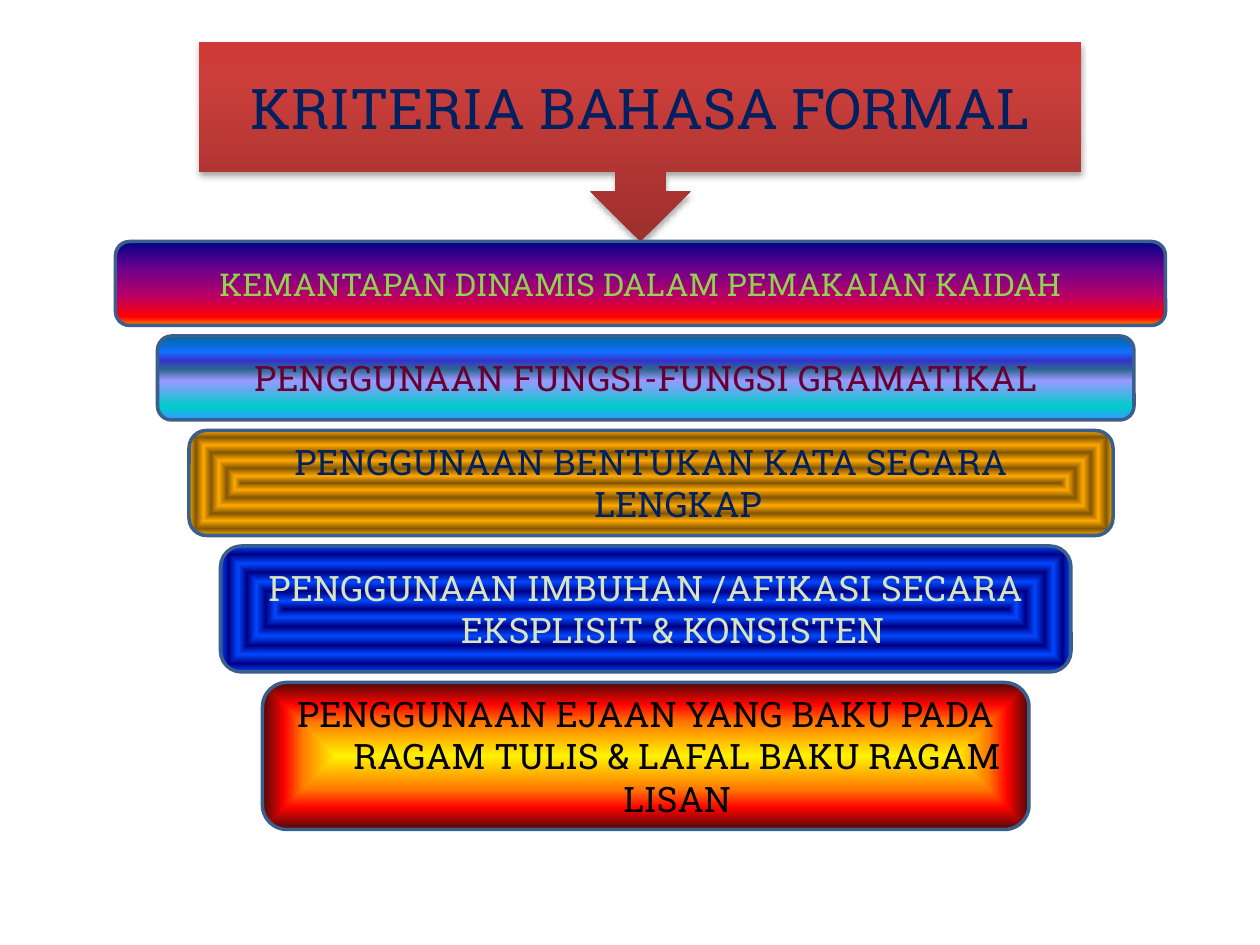
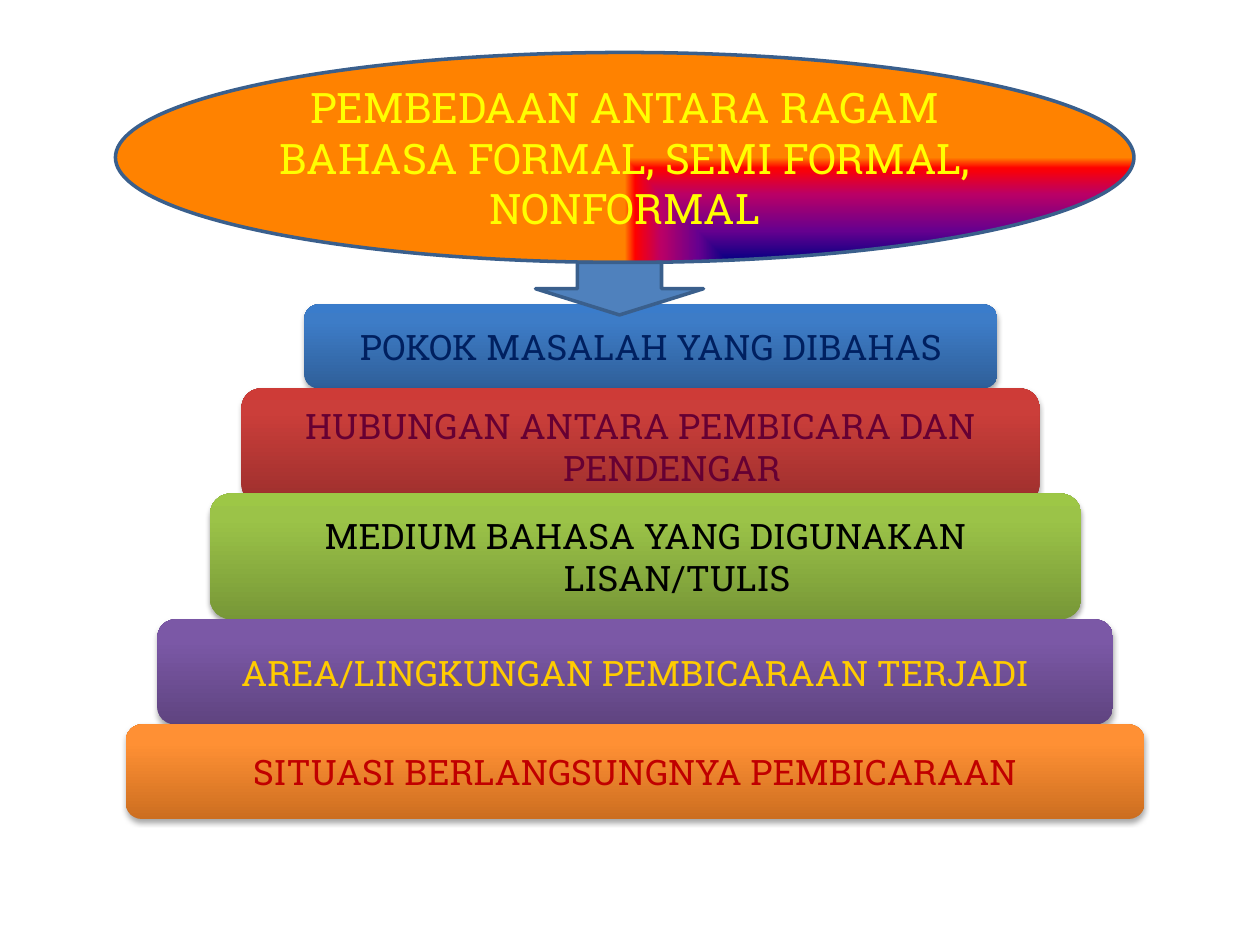
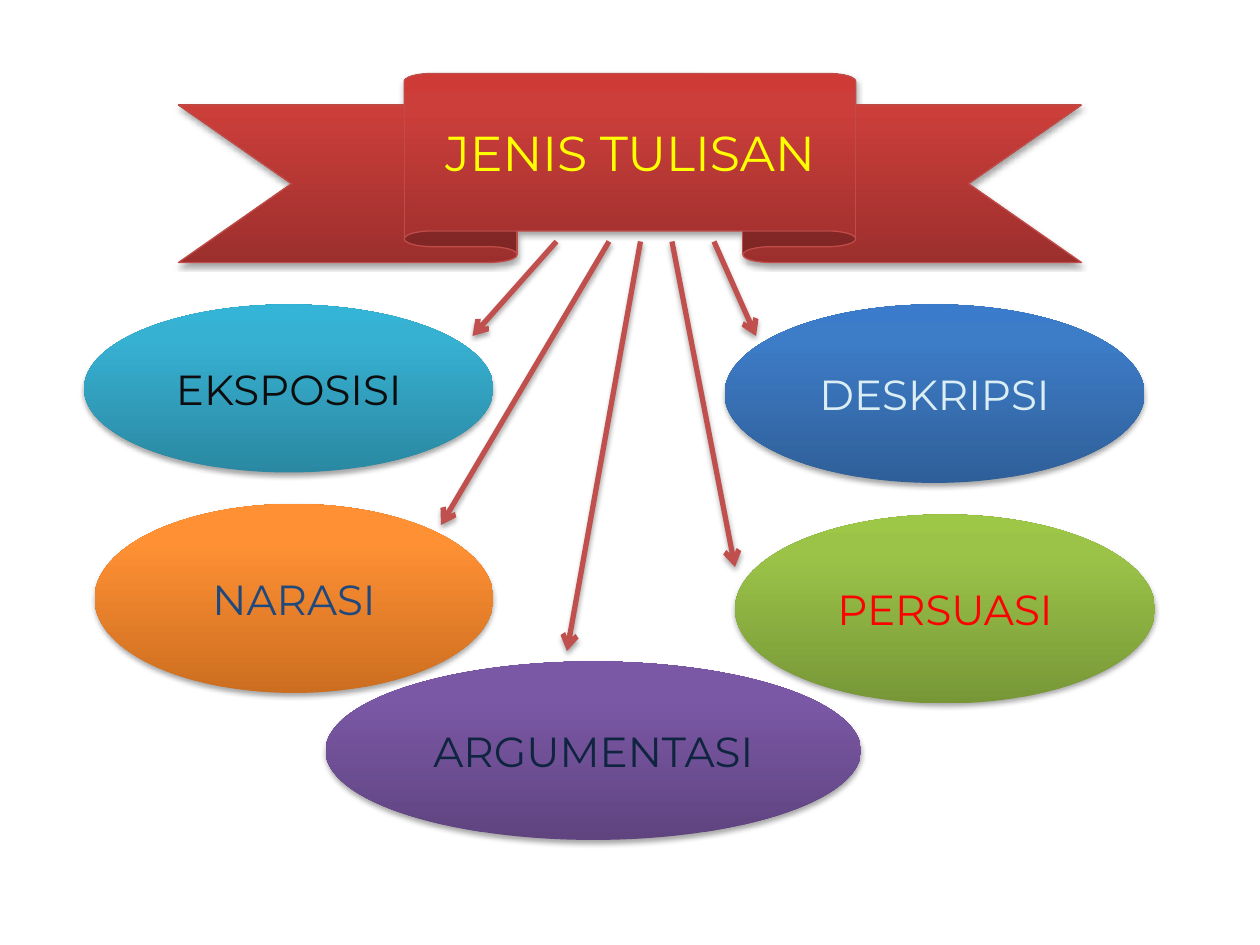
"""Builds three slides on formal language, registers and kinds of writing."""
from lxml import etree
from pptx import Presentation
from pptx.dml.color import RGBColor
from pptx.enum.shapes import MSO_CONNECTOR, MSO_SHAPE
from pptx.enum.text import MSO_ANCHOR, PP_ALIGN
from pptx.oxml import parse_xml
from pptx.oxml.ns import nsdecls, qn
from pptx.util import Pt

SERIF, SANS = "Roboto Slab", "Montserrat"
EDGE = ("3A5F8C", 2)
STEEL = "4F81BD"
ARROW_RED = "C0504D"
UP, DOWN = '<a:lin ang="16200000" scaled="0"/>', '<a:lin ang="5400000" scaled="0"/>'
CENTRE = '<a:path path="shape"><a:fillToRect l="50000" t="50000" r="50000" b="50000"/></a:path>'
CORNER = '<a:path path="rect"><a:fillToRect l="100000" t="100000"/></a:path>'
SUNSET = [(0, "000082"), (30, "66008F"), (65, "BA0066"), (90, "FF0000"), (100, "FF8200")]
OCEAN = [(0, "3399FF"), (16, "00CCCC"), (47, "9999FF"), (60, "2E6792"),
         (71, "3333CC"), (81, "1170FF"), (100, "006699")]
FIRE = [(0, "FFF200"), (45, "FF7A00"), (70, "FF0300"), (100, "4D0808")]


def stripes(dark, light):
    """Return stops that alternate between two colours."""
    return [(pos, (dark, light)[i % 2])
            for i, pos in enumerate((0, 13, 28, 43, 58, 72, 87, 100))]


def glossy(*colors):
    """Return a gradient that rises from dark to light."""
    return list(zip((0, 80, 100), colors)), UP


RED = glossy("9C2F2D", "CB3E3A", "CE3B37")
BLUE = glossy("2F5F99", "3D7CC7", "3A7CCB")
GREEN = glossy("779737", "9BC348", "9DC746")
PURPLE = glossy("5F4480", "7B58A6", "7C57A8")
ORANGE = glossy("CC6E20", "FF9034", "FF9136")
TEAL = glossy("2A88A2", "37B1D2", "34B4D6")

CRITERIA_TOP, CRITERIA = 138, [
    ("KEMANTAPAN DINAMIS DALAM PEMAKAIAN KAIDAH", 66, 600, 48, 6, (SUNSET, DOWN), "92D050", 18),
    ("PENGGUNAAN FUNGSI-FUNGSI GRAMATIKAL", 90, 558, 48, 6, (OCEAN, UP), "660033", 20),
    ("PENGGUNAAN BENTUKAN KATA SECARA LENGKAP ", 108, 528, 60, 6,
     (stripes("825600", "FFA800"), CENTRE), "002060", 20),
    ("PENGGUNAAN IMBUHAN /AFIKASI SECARA EKSPLISIT & KONSISTEN ", 126, 486, 72, 6,
     (stripes("000082", "0047FF"), CENTRE), "D7E4BD", 20),
    ("PENGGUNAAN EJAAN YANG BAKU PADA RAGAM TULIS & LAFAL BAKU RAGAM LISAN", 150, 438, 84, 0,
     (FIRE, CENTRE), "000000", 20),
]
FACTORS_TOP, FACTORS = 174, [
    ("POKOK MASALAH YANG DIBAHAS", 174, 396, 48, 0, BLUE, "002060", 20),
    ("HUBUNGAN ANTARA PEMBICARA DAN PENDENGAR", 138, 456, 66, -6, RED, "660033", 20),
    ("MEDIUM BAHASA YANG DIGUNAKAN LISAN/TULIS", 120, 498, 72, 0, GREEN, "000000", 20),
    ("AREA/LINGKUNGAN PEMBICARAAN TERJADI", 90, 546, 60, 0, PURPLE, "FFCC00", 20),
    ("SITUASI BERLANGSUNGNYA PEMBICARAAN", 72, 582, 54, 0, ORANGE, "C00000", 20),
]
WRITINGS = [
    ("EKSPOSISI", (48, 174, 234, 96), TEAL, "0D0D0D"),
    ("NARASI", (54, 288, 228, 108), ORANGE, "1F497D"),
    ("ARGUMENTASI", (186, 378, 306, 102), PURPLE, "0F243E"),
    ("PERSUASI", (420, 294, 240, 108), GREEN, "FF0000"),
    ("DESKRIPSI", (414, 174, 240, 102), BLUE, "DBEEF4"),
]
ARROWS_TOP, ARROWS = 138, [(318, 270, 192), (348, 252, 300), (366, 324, 372),
                           (384, 420, 324), (408, 432, 192)]


def rgb(color):
    """Turn a hex string into a colour."""
    return RGBColor.from_string(color)


def set_gradient(sp, stops, direction):
    """Fill a shape with a gradient."""
    gs = "".join(f'<a:gs pos="{pos * 1000}"><a:srgbClr val="{color}"/></a:gs>'
                 for pos, color in stops)
    sp._element.spPr.append(parse_xml(
        f'<a:gradFill {nsdecls("a")} rotWithShape="1"><a:gsLst>{gs}</a:gsLst>{direction}</a:gradFill>'))


def set_shadow(sp, visible=True):
    """Give a shape or connector a soft shadow, or none."""
    shadow = ('<a:outerShdw blurRad="39370" dist="22860" dir="5400000" rotWithShape="0">'
              '<a:srgbClr val="000000"><a:alpha val="35000"/></a:srgbClr></a:outerShdw>')
    sp._element.spPr.append(parse_xml(
        f'<a:effectLst {nsdecls("a")}>{shadow if visible else ""}</a:effectLst>'))


def set_line(sp, color, width):
    """Set the colour and width of a line."""
    sp.line.color.rgb = rgb(color)
    sp.line.width = Pt(width)


def add_box(slide, kind, box, fill, line=None, shadow=True):
    """Add a preset shape with its fill, line and shadow."""
    sp = slide.shapes.add_shape(kind, *map(Pt, box))
    if isinstance(fill, str):
        sp.fill.solid()
        sp.fill.fore_color.rgb = rgb(fill)
    else:
        set_gradient(sp, *fill)
    if line:
        set_line(sp, *line)
    else:
        sp.line.fill.background()
    set_shadow(sp, shadow)
    return sp


def set_text(sp, text, color, size, font=SERIF, hanging=0):
    """Write centred text in a shape."""
    tf = sp.text_frame
    tf.word_wrap = True
    tf.vertical_anchor = MSO_ANCHOR.MIDDLE
    p = tf.paragraphs[0]
    p.alignment = PP_ALIGN.CENTER
    if hanging:
        pPr = p._p.get_or_add_pPr()
        pPr.set("marL", str(Pt(hanging)))
        pPr.set("indent", str(-Pt(hanging)))
    r = p.add_run()
    r.text = text
    r.font.color.rgb = rgb(color)
    for name, value in {"name": font, "size": Pt(size)}.items():
        setattr(r.font, name, value)


def add_bars(slide, top, bars, line=None, shadow=True):
    """Stack rounded bars downwards."""
    for text, left, width, height, gap, fill, color, size in bars:
        sp = add_box(slide, MSO_SHAPE.ROUNDED_RECTANGLE, (left, top, width, height),
                     fill, line, shadow)
        set_text(sp, text, color, size, hanging=36)
        top += height + gap


def add_arrow(slide, x1, y1, x2, y2):
    """Add a red arrow between two points."""
    cxn = slide.shapes.add_connector(MSO_CONNECTOR.STRAIGHT, *map(Pt, (x1, y1, x2, y2)))
    set_line(cxn, ARROW_RED, 3)
    etree.SubElement(cxn.line._get_or_add_ln(), qn("a:tailEnd"), type="arrow")
    set_shadow(cxn)


def build_criteria(slide):
    """Build the slide on the criteria of formal language."""
    sp = add_box(slide, MSO_SHAPE.DOWN_ARROW_CALLOUT, (114, 24, 504, 114), RED)
    set_text(sp, "KRITERIA BAHASA FORMAL", "002060", 32)
    add_bars(slide, CRITERIA_TOP, CRITERIA, EDGE, False)


def build_registers(slide):
    """Build the slide on what sets the registers apart."""
    sp = add_box(slide, MSO_SHAPE.OVAL, (66, 30, 582, 120), (SUNSET, CORNER), EDGE, False)
    set_text(sp, "PEMBEDAAN ANTARA RAGAM BAHASA FORMAL, SEMI FORMAL, NONFORMAL", "FFFF00", 24)
    add_bars(slide, FACTORS_TOP, FACTORS)
    add_box(slide, MSO_SHAPE.DOWN_ARROW, (306, 150, 96, 30), STEEL, EDGE, False)


def build_writings(slide):
    """Build the slide on the kinds of writing."""
    sp = add_box(slide, MSO_SHAPE.UP_RIBBON, (102, 42, 516, 108), RED, ("BF4C48", 0.75))
    set_text(sp, "JENIS TULISAN", "FFFF00", 28, SANS)
    for text, box, fill, color in WRITINGS:
        set_text(add_box(slide, MSO_SHAPE.OVAL, box, fill), text, color, 24, SANS)
    for x1, x2, y2 in ARROWS:
        add_arrow(slide, x1, ARROWS_TOP, x2, y2)


def main():
    """Build and save the presentation."""
    prs = Presentation()
    prs.slide_width, prs.slide_height = Pt(720), Pt(540)
    for build in (build_criteria, build_registers, build_writings):
        build(prs.slides.add_slide(prs.slide_layouts[6]))
    prs.save("out.pptx")


if __name__ == "__main__":
    main()
